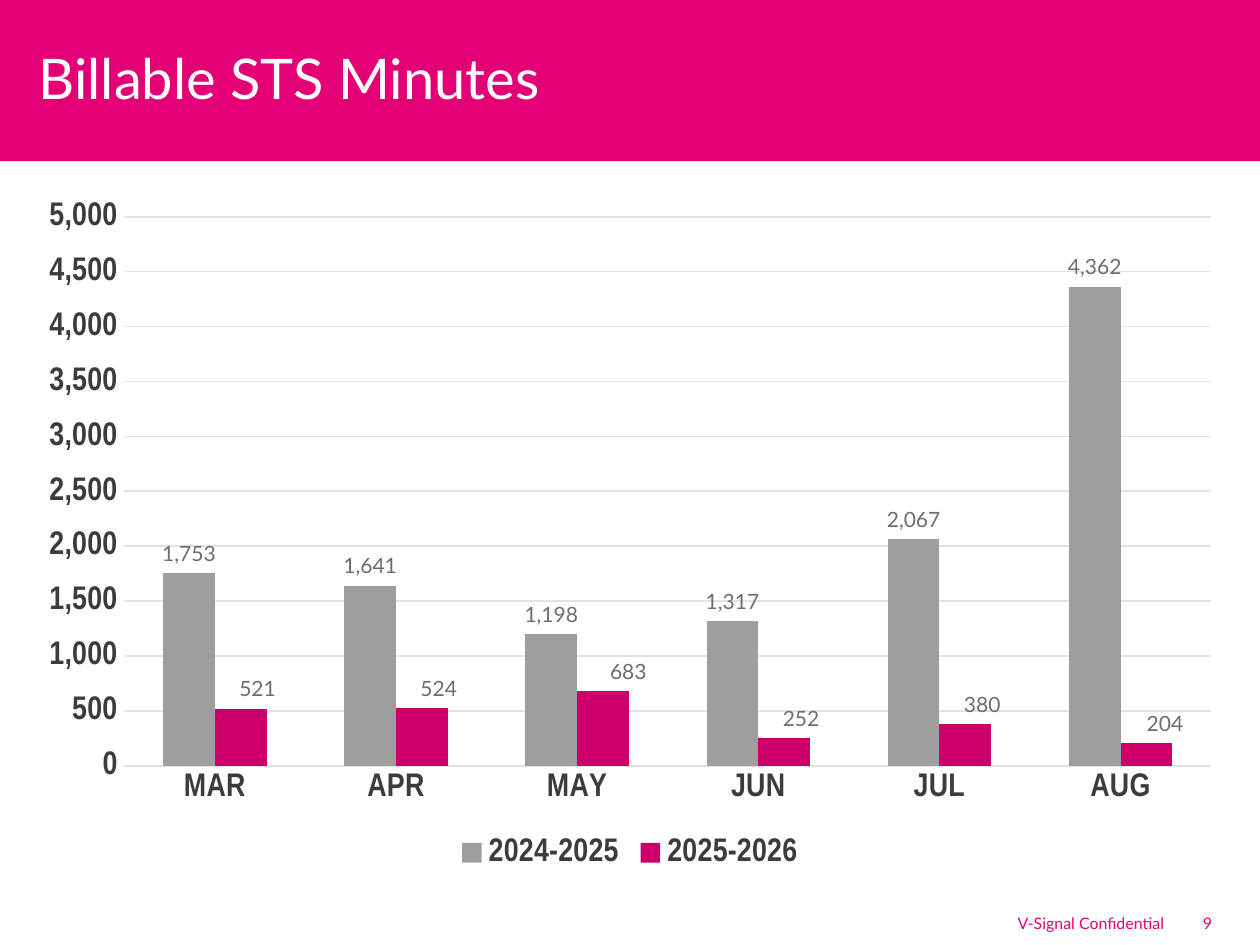
from dataclasses import dataclass

from lxml import etree
from pptx import Presentation
from pptx.chart.data import CategoryChartData
from pptx.dml.color import RGBColor
from pptx.enum.chart import XL_CHART_TYPE as ChartType
from pptx.enum.chart import XL_LABEL_POSITION as LabelPos
from pptx.enum.chart import XL_LEGEND_POSITION as LegendPos
from pptx.enum.chart import XL_TICK_MARK as Tick
from pptx.enum.shapes import MSO_SHAPE as Shape
from pptx.enum.text import MSO_ANCHOR as Anchor
from pptx.enum.text import PP_ALIGN as Align
from pptx.oxml.ns import qn
from pptx.util import Inches, Pt


@dataclass(frozen=True)
class Theme:
    brand: str = "E20074"
    white: str = "FFFFFF"
    ink: str = "3C3C3C"
    label: str = "6D6D6D"
    grid: str = "E2E2E2"
    previous: str = "9E9E9E"
    current: str = "CC006A"
    body_font: str = "Lato"
    axis_font: str = "Arial Narrow"
    title_size: float = 24
    axis_size: float = 14
    chart_size: float = 10
    label_size: float = 9
    footer_size: float = 6.8


SLIDE_WIDTH = 7.5
SLIDE_HEIGHT = SLIDE_WIDTH * 3 / 4
CHART_BOX = (0.15, 1.12, 7.2, 4.09)
PLOT_BOX = (0.59, 0.17, 6.47, 3.27)  # inches within the chart
MONTHS = ("MAR", "APR", "MAY", "JUN", "JUL", "AUG")
PREVIOUS_YEAR = (1753, 1641, 1198, 1317, 2067, 4362)
CURRENT_YEAR = (521, 524, 683, 252, 380, 204)
LABEL_SHIFTS = (0.1, 0.1, 0.15, 0.1, 0.1, 0.11)  # inches to the right
NUMBER_FORMAT = "#,##0"


def rgb(value):
    return RGBColor.from_string(value)


def style_font(font, name, size, color, bold=False):
    font.name = name
    font.size = Pt(size)
    font.bold = bold
    font.color.rgb = rgb(color)


def manual_layout(**values):
    """Return a c:layout element with the given manual settings."""
    layout = etree.Element(qn("c:layout"))
    manual = etree.SubElement(layout, qn("c:manualLayout"))
    for tag, value in values.items():
        etree.SubElement(manual, qn(f"c:{tag}")).set("val", str(value))
    return layout


class SlideBuilder:
    def __init__(self, prs, theme):
        self.theme = theme
        self.slide = prs.slides.add_slide(prs.slide_layouts[5])

    def fill_text(self, sp, box, text, size, color, margins, align=Align.LEFT):
        sp.left, sp.top, sp.width, sp.height = map(Inches, box)
        tf = sp.text_frame
        tf.text = text
        tf.word_wrap = True
        tf.vertical_anchor = Anchor.MIDDLE
        tf.margin_left = tf.margin_right = Inches(margins[0])
        tf.margin_top = tf.margin_bottom = Inches(margins[1])
        p = tf.paragraphs[0]
        p.alignment = align
        style_font(p.runs[0].font, self.theme.body_font, size, color)

    def band(self, box):
        """Add the header band behind the title."""
        sp = self.slide.shapes.add_shape(Shape.RECTANGLE, *map(Inches, box))
        sp.shadow.inherit = False
        sp.fill.solid()
        sp.fill.fore_color.rgb = rgb(self.theme.brand)
        sp.line.fill.background()
        self.slide.shapes.title.element.addprevious(sp.element)

    def title(self, box, text):
        self.fill_text(self.slide.shapes.title, box, text,
                       self.theme.title_size, self.theme.white, (0.08, 0.04))

    def footer(self, box, text, align=Align.LEFT):
        sp = self.slide.shapes.add_textbox(*map(Inches, box))
        self.fill_text(sp, box, text, self.theme.footer_size,
                       self.theme.brand, (0.06, 0.03), align)

    def column_chart(self, box, categories, series):
        """Add a clustered chart; series holds (name, values, color) rows."""
        th = self.theme
        data = CategoryChartData(number_format=NUMBER_FORMAT)
        data.categories = categories
        for name, values, _ in series:
            data.add_series(name, values)
        chart = self.slide.shapes.add_chart(
            ChartType.COLUMN_CLUSTERED, *map(Inches, box), data).chart
        style_font(chart.font, th.body_font, th.chart_size, th.ink)
        chart.has_title = False
        chart.has_legend = True
        chart.legend.position = LegendPos.BOTTOM
        chart.legend.include_in_layout = False
        for font in (chart.legend.font, chart.category_axis.tick_labels.font,
                     chart.value_axis.tick_labels.font):
            style_font(font, th.axis_font, th.axis_size, th.ink, bold=True)
        self.axes(chart)

        plot = chart.plots[0]
        plot.gap_width = 150
        plot.overlap = 0
        plot.vary_by_categories = False
        for s, (_, _, color) in zip(plot.series, series):
            s.format.fill.solid()
            s.format.fill.fore_color.rgb = rgb(color)
            labels = s.data_labels
            labels.show_value = True
            labels.number_format = NUMBER_FORMAT
            labels.number_format_is_linked = False
            self.label_style(labels)
        return chart

    def label_style(self, label):
        th = self.theme
        label.position = LabelPos.OUTSIDE_END
        style_font(label.font, th.body_font, th.label_size, th.label)

    def axes(self, chart):
        for axis in (chart.category_axis, chart.value_axis):
            axis.major_tick_mark = axis.minor_tick_mark = Tick.NONE
            axis.format.line.fill.background()
        axis = chart.value_axis
        axis.minimum_scale, axis.maximum_scale, axis.major_unit = 0, 5000, 500
        axis.tick_labels.number_format = NUMBER_FORMAT
        axis.tick_labels.number_format_is_linked = False
        line = axis.major_gridlines.format.line
        line.color.rgb = rgb(self.theme.grid)
        line.width = Pt(0.75)

    def place_plot(self, chart, chart_box, plot_box):
        width, height = chart_box[2:]
        x, y, w, h = plot_box
        plot_area = chart.element.find(f".//{qn('c:plotArea')}")
        for old in plot_area.findall(qn("c:layout")):
            plot_area.remove(old)
        plot_area.insert(0, manual_layout(
            layoutTarget="inner", xMode="edge", yMode="edge",
            x=x / width, y=y / height, w=w / width, h=h / height))

    def shift_labels(self, chart, index, shifts, chart_width):
        """Move the labels of one series to the right."""
        s = chart.plots[0].series[index]
        for i in range(len(shifts)):
            self.label_style(s.points[i].data_label)
        ser = chart.element.findall(f".//{qn('c:ser')}")[index]
        for label, shift in zip(ser.iter(qn("c:dLbl")), shifts):
            label.insert(1, manual_layout(x=shift / chart_width, y=0))


def main():
    theme = Theme()
    prs = Presentation()
    prs.slide_width, prs.slide_height = Inches(SLIDE_WIDTH), Inches(SLIDE_HEIGHT)
    s = SlideBuilder(prs, theme)
    s.band((0, 0, SLIDE_WIDTH, 0.96))
    s.title((0.15, 0.16, 7.24, 0.6), "Billable STS Minutes")
    chart = s.column_chart(CHART_BOX, MONTHS, (
        ("2024-2025", PREVIOUS_YEAR, theme.previous),
        ("2025-2026", CURRENT_YEAR, theme.current),
    ))
    s.place_plot(chart, CHART_BOX, PLOT_BOX)
    s.shift_labels(chart, 1, LABEL_SHIFTS, CHART_BOX[2])
    s.footer((4.61, 5.41, 2.38, 0.17), "V-Signal Confidential", Align.RIGHT)
    s.footer((7.1, 5.41, 0.38, 0.17), "9")
    prs.save("out.pptx")


if __name__ == "__main__":
    main()
